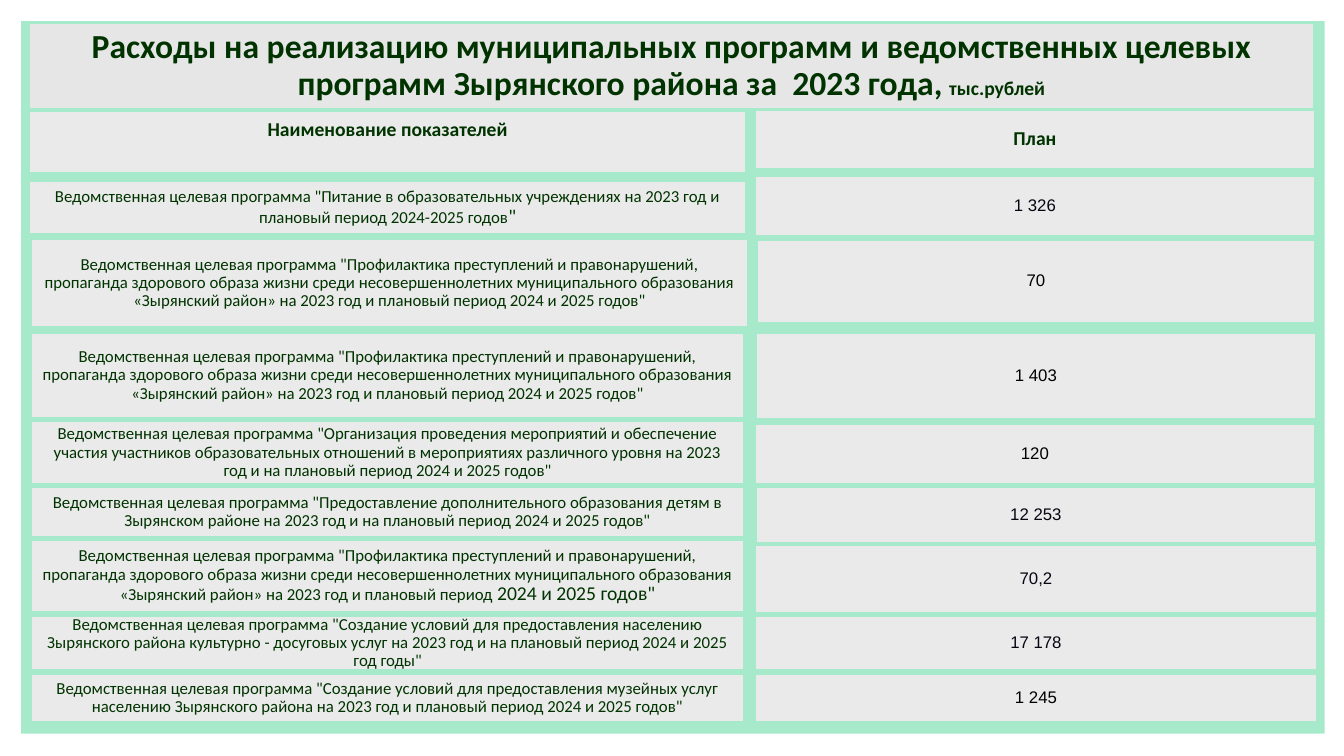
from pptx import Presentation
from pptx.dml.color import RGBColor
from pptx.enum.shapes import MSO_SHAPE as Shape
from pptx.enum.text import MSO_ANCHOR as Anchor, PP_ALIGN as Align
from pptx.util import Inches, Pt

MINT = RGBColor(0xA7, 0xEA, 0xCB)
TITLE_GRAY = RGBColor(0xE7, 0xE6, 0xE6)
CELL_GRAY = RGBColor(0xEA, 0xEA, 0xEA)
GREEN = RGBColor(0x00, 0x33, 0x00)
INK = RGBColor(0x06, 0x06, 0x12)
BLACK = RGBColor(0, 0, 0)

PROGRAM = "Ведомственная целевая программа "
PREVENTION = (
    '"Профилактика преступлений и правонарушений, пропаганда здорового образа жизни '
    "среди несовершеннолетних муниципального образования «Зырянский район» "
    "на 2023 год и плановый период "
)
YEARS = '2024 и 2025 годов"'

TITLE = [
    ("Расходы на реализацию муниципальных программ и ведомственных целевых программ "
     "Зырянского района за  2023 года,", 24),
    (" ", 20),
    ("тыс.рублей", 14),
]
HEADERS = [
    ("Наименование показателей", (0.3, 1.11, 7.09, 0.6), Anchor.TOP, 1.0),
    ("План", (7.5, 1.1, 5.53, 0.57), Anchor.MIDDLE, 0.9),
]
ROWS = [
    ([('"Питание в образовательных учреждениях на 2023 год и плановый период '
       "2024-2025 годов", 12), ('"', 14)],
     (0.3, 1.81, 7.09, 0.5), "1 326", (7.5, 1.76, 5.53, 0.57), INK),
    ([(PREVENTION + YEARS, 12)],
     (0.32, 2.38, 7.09, 0.85), "70", (7.52, 2.39, 5.51, 0.8), BLACK),
    ([(PREVENTION + YEARS, 12)],
     (0.32, 3.31, 7.05, 0.83), "1 403", (7.51, 3.31, 5.53, 0.84), BLACK),
    ([('"Организация проведения мероприятий и обеспечение участия участников '
       "образовательных отношений в мероприятиях различного уровня на 2023 год "
       "и на плановый период " + YEARS, 12)],
     (0.32, 4.19, 7.05, 0.6), "120", (7.5, 4.22, 5.53, 0.57), BLACK),
    ([('"Предоставление дополнительного образования детям в Зырянском районе '
       "на 2023 год и на плановый период " + YEARS, 12)],
     (0.32, 4.84, 7.05, 0.48), "12 253", (7.51, 4.84, 5.53, 0.54), INK),
    ([(PREVENTION, 12), (YEARS, 14)],
     (0.32, 5.37, 7.05, 0.69), "70,2", (7.5, 5.42, 5.55, 0.65), INK),
    ([('"Создание условий для предоставления населению Зырянского района культурно - '
       "досуговых услуг на 2023 год и на плановый период 2024 и 2025 год годы\"", 12)],
     (0.32, 6.12, 7.05, 0.52), "17 178", (7.5, 6.12, 5.55, 0.52), INK),
    ([('"Создание условий для предоставления музейных услуг населению Зырянского района '
       "на 2023 год и плановый период " + YEARS, 12)],
     (0.32, 6.7, 7.05, 0.45), "1 245", (7.5, 6.7, 5.55, 0.45), BLACK),
]

presentation = Presentation()
presentation.slide_width = Inches(13.33)
presentation.slide_height = Inches(7.5)
slide = presentation.slides.add_slide(presentation.slide_layouts[6])


def add_block(box, fill, kind=Shape.ACTION_BUTTON_CUSTOM):
    shape = slide.shapes.add_shape(kind, *map(Inches, box))
    shape.shadow.inherit = False
    shape.fill.solid()
    shape.fill.fore_color.rgb = fill
    shape.line.fill.background()
    return shape


def add_cell(box, runs, fill=CELL_GRAY, color=GREEN, font="Calibri", bold=False,
             wrap=True, anchor=Anchor.MIDDLE, spacing=0.9):
    frame = add_block(box, fill).text_frame
    frame_format = {
        "word_wrap": wrap, "vertical_anchor": anchor,
        "margin_left": Inches(0.1), "margin_right": Inches(0.1),
        "margin_top": Inches(0.05), "margin_bottom": Inches(0.05),
    }
    for name, value in frame_format.items():
        setattr(frame, name, value)
    paragraph = frame.paragraphs[0]
    paragraph.alignment = Align.CENTER
    paragraph.line_spacing = spacing
    for text, size in runs:
        run = paragraph.add_run()
        run.text = text
        for name, value in {"name": font, "size": Pt(size), "bold": bold}.items():
            setattr(run.font, name, value)
        run.font.color.rgb = color


add_block((0.21, 0.21, 12.93, 7.07), MINT, Shape.RECTANGLE)
add_cell((0.3, 0.24, 12.72, 0.83), TITLE, fill=TITLE_GRAY, bold=True)
for text, box, anchor, spacing in HEADERS:
    add_cell(box, [(text, 14)], bold=True, anchor=anchor, spacing=spacing)
for runs, name_box, amount, amount_box, color in ROWS:
    (first, size), *rest = runs
    add_cell(name_box, [(PROGRAM + first, size), *rest])
    add_cell(amount_box, [(amount, 12)], color=color, font="Arial", wrap=False)

presentation.save("out.pptx")
